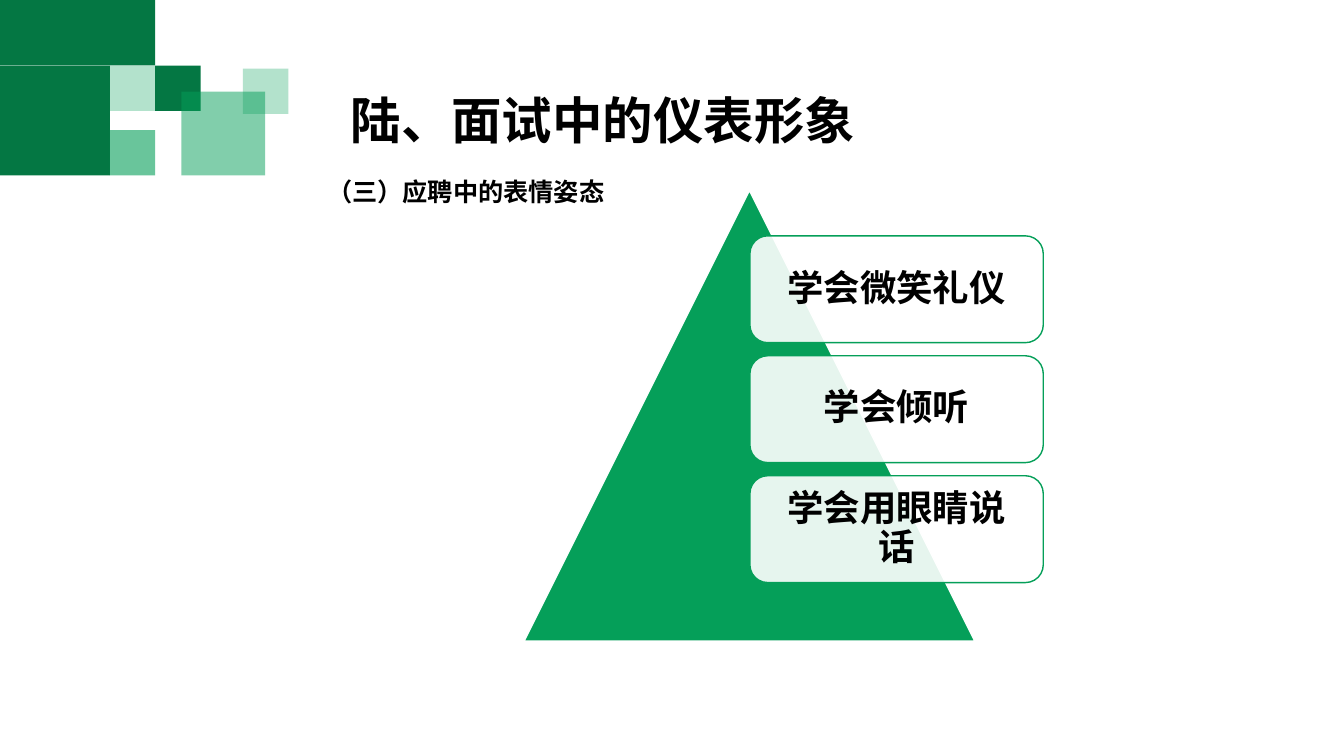
from lxml.etree import SubElement
from pptx import Presentation
from pptx.dml.color import RGBColor
from pptx.enum.shapes import MSO_SHAPE
from pptx.enum.text import MSO_ANCHOR, MSO_AUTO_SIZE, PP_ALIGN
from pptx.oxml.ns import qn
from pptx.util import Inches, Pt

WIDTH, HEIGHT = Inches(13.33), Inches(7.5)
COLUMNS, ROWS = 40, 22.5
DARK_GREEN, GREEN, WHITE, BLACK = "047743", "059F59", "FFFFFF", "000000"
CJK_FONT, LATIN_FONT = "Noto Sans CJK SC", "Calibri"

SMALL, LARGE = 1.35, 2.49
MOSAIC = [
    (0, 1.95, 3.27, 3.27, DARK_GREEN, 100),
    (0, 0, 4.62, 1.95, DARK_GREEN, 100),
    (3.27, 1.95, SMALL, SMALL, GREEN, 30),
    (4.62, 1.95, SMALL, SMALL, DARK_GREEN, 100),
    (3.27, 3.87, SMALL, SMALL, GREEN, 60),
    (5.4, 2.73, LARGE, LARGE, GREEN, 50),
    (7.23, 2.04, SMALL, SMALL, GREEN, 30),
]
SKILLS = ["学会微笑礼仪", "学会倾听", "学会用眼睛说话"]
CARD_LEFT, CARD_TOP, CARD_WIDTH, CARD_HEIGHT, CARD_STEP = 22.32, 7.02, 8.73, 3.18, 3.57
CARD_INSET = 0.48


def across(columns):
    return round(WIDTH * columns / COLUMNS)


def down(rows):
    return round(HEIGHT * rows / ROWS)


def box(left, top, width, height):
    return across(left), down(top), across(width), down(height)


def paint(color_format, color):
    color_format.rgb = RGBColor.from_string(color)


def add_figure(slide, kind, area, fill, opacity=100, line=None):
    shape = slide.shapes.add_shape(kind, *box(*area))
    shape.shadow.inherit = False
    shape.fill.solid()
    paint(shape.fill.fore_color, fill)
    if opacity < 100:
        color = shape.fill._xPr.find(qn("a:solidFill"))[0]
        SubElement(color, qn("a:alpha"), val=str(opacity * 1000))
    if line:
        paint(shape.line.color, line)
        shape.line.width = Pt(1)
    else:
        shape.line.fill.background()
    return shape


def write(shape, text, size, font, spacing, alignment=PP_ALIGN.LEFT, anchor=MSO_ANCHOR.TOP):
    text_frame = shape.text_frame
    text_frame.text = text
    text_frame.word_wrap = True
    text_frame.auto_size = MSO_AUTO_SIZE.NONE
    text_frame.vertical_anchor = anchor
    paragraph = text_frame.paragraphs[0]
    paragraph.alignment = alignment
    paragraph.line_spacing = spacing
    run = paragraph.runs[0]
    run.font.size = Pt(size)
    run.font.bold = True
    run.font.name = font
    paint(run.font.color, BLACK)
    SubElement(run.font._element, qn("a:ea"), typeface=CJK_FONT)
    return paragraph


def number_paragraph(paragraph, start):
    properties = paragraph._p.get_or_add_pPr()
    indent = Inches(0.38)
    properties.set("marL", str(indent))
    properties.set("indent", str(-indent))
    SubElement(properties, qn("a:buFont"), typeface=CJK_FONT)
    SubElement(properties, qn("a:buAutoNum"), type="ea1ChsPlain", startAt=str(start))


def add_title(slide):
    title = slide.shapes.title
    title.left, title.top, title.width, title.height = box(10.14, 1.59, 15.75, 2.7)
    paragraph = write(title, "、面试中的仪表形象", 36, CJK_FONT, 1.5)
    number_paragraph(paragraph, 6)


def add_subtitle(slide):
    subtitle = slide.shapes.add_textbox(*box(9.44, 4.65, 9.22, 2.58))
    write(subtitle, "（三）应聘中的表情姿态", 18, CJK_FONT, 1.5)


def add_skill_card(slide, index, skill):
    area = CARD_LEFT, CARD_TOP + index * CARD_STEP, CARD_WIDTH, CARD_HEIGHT
    card = add_figure(slide, MSO_SHAPE.ROUNDED_RECTANGLE, area, WHITE, 90, GREEN)
    write(card, skill, 26, LATIN_FONT, 0.9, PP_ALIGN.CENTER, MSO_ANCHOR.MIDDLE)
    text_frame = card.text_frame
    text_frame.margin_left = text_frame.margin_right = across(CARD_INSET)
    text_frame.margin_top = text_frame.margin_bottom = down(CARD_INSET)


def main():
    presentation = Presentation()
    presentation.slide_width, presentation.slide_height = WIDTH, HEIGHT
    slide = presentation.slides.add_slide(presentation.slide_layouts[5])
    for *area, color, opacity in MOSAIC:
        add_figure(slide, MSO_SHAPE.RECTANGLE, area, color, opacity)
    add_title(slide)
    add_subtitle(slide)
    add_figure(slide, MSO_SHAPE.ISOSCELES_TRIANGLE, (15.6, 5.67, 13.41, 13.41), GREEN, line=WHITE)
    for index, skill in enumerate(SKILLS):
        add_skill_card(slide, index, skill)
    presentation.save("out.pptx")


if __name__ == "__main__":
    main()
